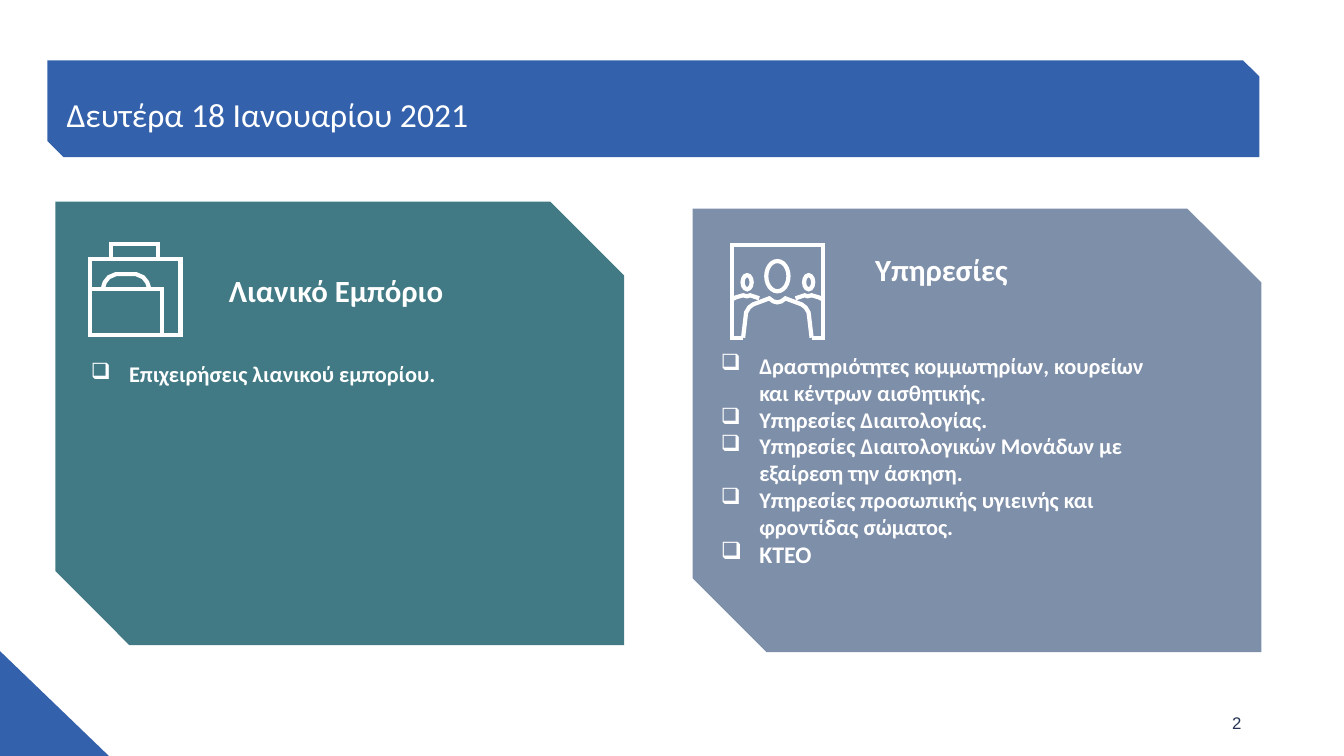
from dataclasses import dataclass
from lxml.etree import SubElement
from pptx import Presentation
from pptx.dml.color import RGBColor
from pptx.enum.shapes import MSO_SHAPE
from pptx.enum.text import MSO_ANCHOR, MSO_AUTO_SIZE, PP_ALIGN
from pptx.oxml.ns import qn
from pptx.util import Inches, Pt


@dataclass(frozen=True)
class Theme:
    blue: str = "3461AB"
    teal: str = "417A85"
    slate: str = "7E8FA9"
    white: str = "FFFFFF"
    navy: str = "243355"
    font: str = "Calibri"
    number_font: str = "Arial"
    title: int = 24
    heading: int = 22
    body: int = 16
    abbreviation: int = 17
    number: int = 12
    stroke: int = 3


def write(p, text, size, color, font, bold=False, indent=0, hanging=0,
          before=None, line=None, bullet=None):
    pPr = p._p.get_or_add_pPr()
    pPr.set("marL", str(Inches(indent)))
    pPr.set("indent", str(Inches(-hanging)))
    if bullet:
        clr = SubElement(pPr, qn("a:buClr"))
        SubElement(clr, qn("a:srgbClr")).set("val", color)
        SubElement(pPr, qn("a:buChar")).set("char", bullet)
    p.alignment = PP_ALIGN.LEFT
    if before is not None:
        p.space_before = Pt(before)
    if line:
        p.line_spacing = Pt(line)
    r = p.add_run()
    r.text = text
    r.font.name, r.font.size, r.font.bold = font, Pt(size), bold
    r.font.color.rgb = RGBColor.from_string(color)


class SlideBuilder:
    def __init__(self, slide, theme):
        self.s, self.t = slide, theme

    def block(self, kind, box, color):
        sp = self.s.shapes.add_shape(kind, *map(Inches, box))
        sp.shadow.inherit = False
        sp.fill.solid()
        sp.fill.fore_color.rgb = RGBColor.from_string(color)
        sp.line.fill.background()

    def frame(self, sp, box):
        sp.left, sp.top, sp.width, sp.height = map(Inches, box)
        tf = sp.text_frame
        tf.word_wrap = True
        tf.auto_size = MSO_AUTO_SIZE.NONE
        tf.vertical_anchor = MSO_ANCHOR.TOP
        tf.margin_left = tf.margin_right = tf.margin_top = tf.margin_bottom = 0
        return tf

    def title(self, text, box):
        sp = self.s.shapes.title
        sp.element.getparent().append(sp.element)  # bring in front of the bar
        tf = self.frame(sp, box)
        write(tf.paragraphs[0], text, self.t.title, self.t.white, self.t.font,
              indent=0.09)

    def text_box(self, box):
        return self.frame(self.s.shapes.add_textbox(*map(Inches, box)), box)

    def bullet_list(self, box, heading, heading_indent, gap, items):
        t = self.t
        tf = self.text_box(box)
        write(tf.paragraphs[0], heading, t.heading, t.white, t.font, bold=True,
              indent=heading_indent)
        for i, (text, size, line) in enumerate(items):
            write(tf.add_paragraph(), text, size, t.white, t.font, bold=True,
                  indent=0.39, hanging=0.38, before=0 if i else gap,
                  line=line, bullet="❑")

    def number(self, text, box):
        write(self.text_box(box).paragraphs[0], text, self.t.number,
              self.t.navy, self.t.number_font, indent=0.01)

    def outline(self, sp):
        sp.shadow.inherit = False
        sp.fill.background()
        sp.line.color.rgb = RGBColor.from_string(self.t.white)
        sp.line.width = Pt(self.t.stroke)
        SubElement(sp.line._ln, qn("a:miter")).set("lim", "800000")

    def outlined_shape(self, kind, box):
        self.outline(self.s.shapes.add_shape(kind, *map(Inches, box)))

    def polyline(self, points):
        pts = [(Inches(x), Inches(y)) for x, y in points]
        fb = self.s.shapes.build_freeform(*pts[0])
        fb.add_line_segments(pts[1:], close=False)
        self.outline(fb.convert_to_shape())


def bag_icon(b):
    for box in [(1.1, 2.42, 0.47, 0.15), (0.89, 2.57, 0.9, 0.75),
                (0.89, 2.87, 0.72, 0.45)]:
        b.outlined_shape(MSO_SHAPE.RECTANGLE, box)
    b.polyline([(1.02, 2.86), (1.04, 2.8), (1.08, 2.75), (1.15, 2.72),
                (1.35, 2.72), (1.42, 2.75), (1.46, 2.8), (1.48, 2.86)])


def people_icon(b):
    axis = 7.71

    def mirror(points):
        return [(2 * axis - x, y) for x, y in points]

    # Open frame, then the front person's shoulders
    frame = [(7.37, 3.35), (7.26, 3.35), (7.26, 2.43), (axis, 2.43)]
    b.polyline(frame + mirror(frame[:-1])[::-1])
    body = [(7.37, 3.35), (7.4, 3.1), (7.43, 3.05), (7.47, 3.02),
            (7.63, 2.96), (7.67, 2.99), (axis, 3)]
    b.polyline(body + mirror(body[:-1])[::-1])
    # People on either side
    shoulder = [(7.26, 2.97), (7.3, 2.95), (7.37, 2.93), (7.41, 2.94),
                (7.44, 2.93), (7.53, 2.96)]
    b.polyline(shoulder)
    b.polyline(mirror(shoulder))
    # Heads
    for cx, cy, w, h in [(7.41, 2.8, 0.09, 0.14), (axis, 2.74, 0.22, 0.3),
                         (8.02, 2.8, 0.09, 0.14)]:
        b.outlined_shape(MSO_SHAPE.OVAL, (cx - w / 2, cy - h / 2, w, h))


def main():
    prs = Presentation()
    prs.slide_width, prs.slide_height = Inches(13.33), Inches(7.5)
    t = Theme()
    b = SlideBuilder(prs.slides.add_slide(prs.slide_layouts[5]), t)

    # Corner, panels and title bar
    b.block(MSO_SHAPE.RIGHT_TRIANGLE, (0, 6.46, 1.08, 1.04), t.blue)
    for box, color in [((0.55, 2, 5.64, 4.4), t.teal),
                       ((6.87, 2.07, 5.64, 4.4), t.slate),
                       ((0.47, 0.6, 12.02, 0.96), t.blue)]:
        b.block(MSO_SHAPE.SNIP_2_DIAG_RECTANGLE, box, color)
    b.title("Δευτέρα 18 Ιανουαρίου 2021", (0.57, 0.93, 12.19, 0.36))

    # Retail
    b.bullet_list((0.89, 2.7, 3.52, 1.08), "Λιανικό Εμπόριο", 1.38, 36.6,
                  [("Επιχειρήσεις λιανικού εμπορίου.", t.body, None)])
    bag_icon(b)

    # Services
    services = ["Δραστηριότητες κομμωτηρίων, κουρείων και κέντρων αισθητικής.",
                "Υπηρεσίες Διαιτολογίας.",
                "Υπηρεσίες Διαιτολογικών Μονάδων με εξαίρεση την άσκηση.",
                "Υπηρεσίες προσωπικής υγιεινής και φροντίδας σώματος."]
    b.bullet_list((7.14, 2.49, 4.35, 3.1), "Υπηρεσίες", 1.54, 45.7,
                  [(text, t.body, None) for text in services]
                  + [("ΚΤΕΟ", t.abbreviation, 20.4)])
    people_icon(b)

    # Slide number
    b.number("2", (12.21, 7.07, 0.12, 0.2))
    prs.save("out.pptx")


if __name__ == "__main__":
    main()
